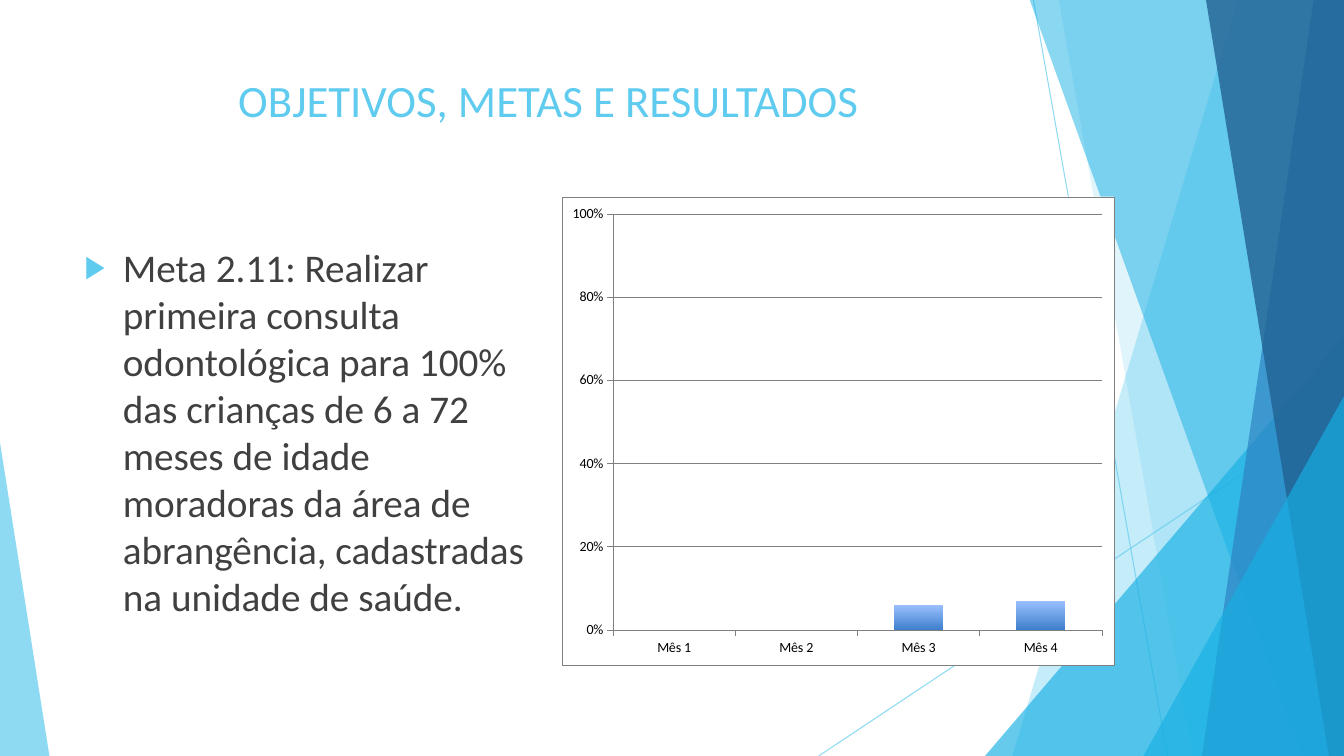
import pptx
import pptx.chart.data
import pptx.dml.color
import pptx.enum.chart
import pptx.enum.shapes
import pptx.enum.text
import pptx.oxml
import pptx.oxml.ns
import pptx.util
from pptx.util import Inches

COLORS = {
    "sky": "5FCBEF", "cyan": "17B0E4", "blue": "2E83C3", "navy": "226292",
    "text": "404040", "black": "000000", "white": "FFFFFF", "gray": "808080",
    "bar_top": "9BC1FF", "bar_bottom": "3F80CD",
}
FONT = "Calibri"
WIDTH, HEIGHT = 13.33, 7.5
NAMESPACES = pptx.oxml.ns.nsdecls("a", "c")
qn = pptx.oxml.ns.qn


def rgb(name):
    return pptx.dml.color.RGBColor.from_string(COLORS[name])


def set_alpha(fill_parent, percent):
    color = fill_parent.find(".//" + qn("a:srgbClr"))
    color.append(pptx.oxml.parse_xml(f'<a:alpha {NAMESPACES} val="{percent * 1000}"/>'))


def paint(shape, color, percent):
    shape.shadow.inherit = False
    shape.fill.solid()
    shape.fill.fore_color.rgb = rgb(color)
    set_alpha(shape._element.spPr, percent)
    shape.line.fill.background()


def add_ray(page, start, end):
    ray = page.shapes.add_connector(
        pptx.enum.shapes.MSO_CONNECTOR.STRAIGHT, *map(Inches, start + end))
    ray.line.color.rgb = rgb("sky")
    ray.line.width = pptx.util.Pt(0.75)
    properties = ray._element.spPr
    set_alpha(properties, 70)
    properties.append(pptx.oxml.parse_xml(f"<a:effectLst {NAMESPACES}/>"))


def add_band(page, top_x, bottom_x, color, percent):
    """Band from a slanted left edge to the right side of the page."""
    builder = page.shapes.build_freeform(Inches(top_x), Inches(-0.01))
    corners = [(WIDTH, -0.01), (WIDTH, HEIGHT), (bottom_x, HEIGHT)]
    builder.add_line_segments([(Inches(x), Inches(y)) for x, y in corners], close=True)
    paint(builder.convert_to_shape(), color, percent)


def add_corner(page, left, top, width, apex, color, percent):
    """Triangle standing on the bottom of the page."""
    corner = page.shapes.add_shape(
        pptx.enum.shapes.MSO_SHAPE.ISOSCELES_TRIANGLE,
        Inches(left), Inches(top), Inches(width), Inches(HEIGHT - top))
    corner.adjustments[0] = apex
    paint(corner, color, percent)


def add_backdrop(page):
    add_ray(page, (10.25, 0), (11.58, HEIGHT))
    add_ray(page, (WIDTH, 4.03), (8.12, HEIGHT))
    add_band(page, 12.28, 10.04, "sky", 36)
    add_band(page, 10.5, 11.83, "sky", 20)
    add_corner(page, 9.77, 3.33, 3.56, 1, "cyan", 66)
    add_band(page, 10.21, 12.91, "cyan", 50)
    add_band(page, 13.03, 11.92, "blue", 70)
    add_band(page, 11.96, 13.18, "navy", 80)
    add_corner(page, 11.34, 3.93, 1.99, 1, "cyan", 66)
    add_corner(page, 0, 4.39, 0.49, 0, "sky", 70)


def add_text(page, box, text, size, color):
    frame = page.shapes.add_textbox(*map(Inches, box)).text_frame
    frame.word_wrap = True
    para = frame.paragraphs[0]
    para.text = text
    para.font.name = FONT
    para.font.size = pptx.util.Pt(size)
    para.font.color.rgb = rgb(color)
    return para


def add_title(page, box, text):
    para = add_text(page, box, text, 32, "sky")
    para.alignment = pptx.enum.text.PP_ALIGN.CENTER


def add_goal(page, box, text):
    para = add_text(page, box, text, 28, "text")
    para.space_before = pptx.util.Pt(10)
    properties = para._p.get_or_add_pPr()
    properties.set("marL", str(Inches(0.38)))
    properties.set("indent", str(Inches(-0.38)))
    # Bullet elements go between the spacing and the default run properties
    defaults = properties.find(qn("a:defRPr"))
    for bullet in (
        f'<a:buClr {NAMESPACES}><a:srgbClr val="{COLORS["sky"]}"/></a:buClr>',
        f'<a:buSzPct {NAMESPACES} val="80000"/>',
        f'<a:buFont {NAMESPACES} typeface="{FONT}"/>',
        f'<a:buChar {NAMESPACES} char="▶"/>',
    ):
        defaults.addprevious(pptx.oxml.parse_xml(bullet))


def style_line(line):
    line.color.rgb = rgb("gray")
    line.width = pptx.util.Pt(0.25)


def frame_chart(chart, size, plot_box):
    """White background, thin border and a plot area placed in inches."""
    solid = f'<a:solidFill><a:srgbClr val="{COLORS["white"]}"/></a:solidFill>'
    border = (f'<a:ln w="{pptx.util.Pt(0.25)}"><a:solidFill>'
              f'<a:srgbClr val="{COLORS["gray"]}"/></a:solidFill></a:ln>')
    chart_xml = chart._chartSpace.find(qn("c:chart"))
    chart_xml.addnext(pptx.oxml.parse_xml(
        f"<c:spPr {NAMESPACES}>{solid}{border}</c:spPr>"))

    plot_area = chart_xml.find(qn("c:plotArea"))
    for layout in plot_area.findall(qn("c:layout")):
        plot_area.remove(layout)
    shares = [length / whole for length, whole in zip(plot_box, size * 2)]
    places = "".join(f'<c:{key} val="{value}"/>' for key, value in (
        ("layoutTarget", "inner"), ("xMode", "edge"), ("yMode", "edge"),
        *zip("xywh", shares)))
    plot_area.insert(0, pptx.oxml.parse_xml(
        f"<c:layout {NAMESPACES}><c:manualLayout>{places}</c:manualLayout></c:layout>"))
    plot_area.append(pptx.oxml.parse_xml(f"<c:spPr {NAMESPACES}>{solid}</c:spPr>"))


def add_results(page, box, months, values):
    data = pptx.chart.data.CategoryChartData(number_format="0%")
    data.categories = months
    data.add_series("Series 1", values)
    chart = page.shapes.add_chart(
        pptx.enum.chart.XL_CHART_TYPE.COLUMN_CLUSTERED, *map(Inches, box), data).chart
    chart.has_title = chart.has_legend = False
    chart.font.name = FONT
    chart.font.size = pptx.util.Pt(10)
    chart.font.color.rgb = rgb("black")

    # Axes
    for axis in (chart.category_axis, chart.value_axis):
        axis.major_tick_mark = pptx.enum.chart.XL_TICK_MARK.OUTSIDE
        axis.minor_tick_mark = pptx.enum.chart.XL_TICK_MARK.NONE
        style_line(axis.format.line)
    scale = chart.value_axis
    scale.minimum_scale, scale.maximum_scale, scale.major_unit = 0, 1, 0.2
    scale.tick_labels.number_format = "0%"
    scale.tick_labels.number_format_is_linked = False
    scale.has_major_gridlines = True
    style_line(scale.major_gridlines.format.line)

    # Columns
    plot = chart.plots[0]
    plot.gap_width = 150
    plot.vary_by_categories = False
    fill = plot.series[0].format.fill
    fill.gradient()
    fill.gradient_angle = 270
    for stop, position, color in zip(fill.gradient_stops, (0, 1), ("bar_top", "bar_bottom")):
        stop.position = position
        stop.color.rgb = rgb(color)
    left_gap, top_gap, right_gap, bottom_gap = 0.51, 0.17, 0.12, 0.35
    width, height = box[2:]
    frame_chart(chart, (width, height), (
        left_gap, top_gap, width - left_gap - right_gap, height - top_gap - bottom_gap))


def main():
    deck = pptx.Presentation()
    deck.slide_width, deck.slide_height = Inches(WIDTH), Inches(HEIGHT)
    page = deck.slides.add_slide(deck.slide_layouts[6])
    add_backdrop(page)
    add_title(page, (0.74, 0.67, 9.4, 1.44), "OBJETIVOS, METAS E RESULTADOS")
    add_goal(page, (0.74, 2.36, 4.58, 4.24),
             "Meta 2.11: Realizar primeira consulta odontológica para 100% das crianças "
             "de 6 a 72 meses de idade moradoras da área de abrangência, cadastradas na "
             "unidade de saúde.")
    add_results(page, (5.57, 1.95, 5.48, 4.65),
                [f"Mês {number}" for number in range(1, 5)], (0, 0, 0.06, 0.07))
    deck.save("out.pptx")


if __name__ == "__main__":
    main()
